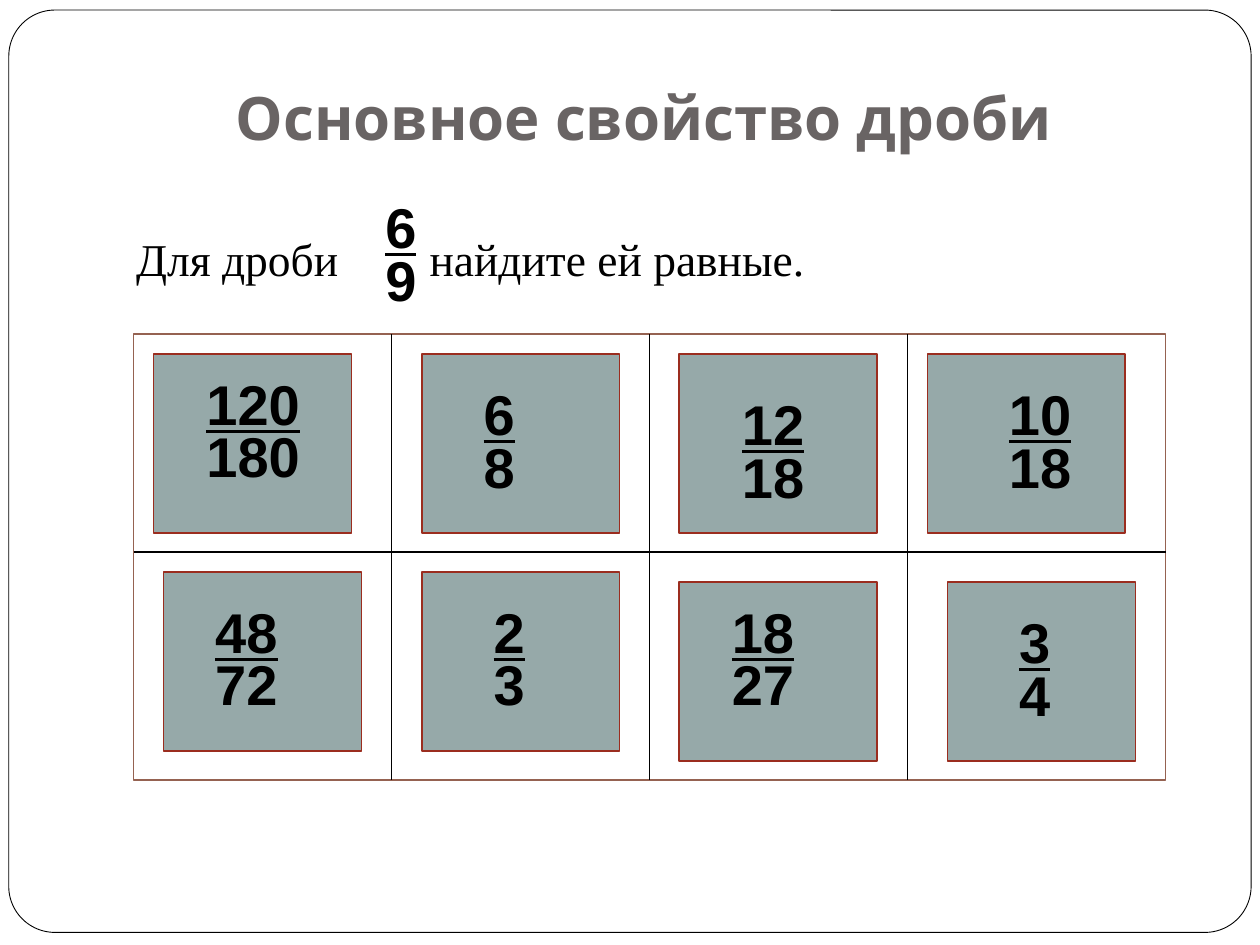
from dataclasses import dataclass

from lxml import etree
from pptx import Presentation
from pptx.dml.color import RGBColor
from pptx.enum.shapes import MSO_CONNECTOR, MSO_SHAPE
from pptx.enum.text import MSO_ANCHOR, MSO_AUTO_SIZE, PP_ALIGN
from pptx.oxml.ns import qn
from pptx.util import Inches, Pt

STRAIGHT = MSO_CONNECTOR.STRAIGHT
RECTANGLE = MSO_SHAPE.RECTANGLE
ROUNDED = MSO_SHAPE.ROUNDED_RECTANGLE
BOTTOM = MSO_ANCHOR.BOTTOM
TOP = MSO_ANCHOR.TOP
NO_FIT = MSO_AUTO_SIZE.NONE
LEFT = PP_ALIGN.LEFT


@dataclass(frozen=True)
class Theme:
    white: str = "FFFFFF"
    black: str = "000000"
    title: str = "696464"
    card: str = "96A9A9"
    card_line: str = "9B2D1F"
    grid_line: str = "956251"
    title_font: str = "Karla"
    body_font: str = "Times New Roman"
    digit_font: str = "Arial"
    title_size: float = 34.2
    body_size: float = 26
    digit_size: float = 32


@dataclass(frozen=True)
class Fraction:
    top_number: str
    bottom_number: str
    left: float
    top: float
    width: float = 0.63


@dataclass(frozen=True)
class Card:
    left: float
    top: float
    fraction: Fraction
    width: float = 1.57


THEME = Theme()
CARD_HEIGHT = 1.42
DIGIT_HEIGHT = 0.63
DIGIT_STEP = 0.42
GRID_LEFT, GRID_TOP, GRID_WIDTH, GRID_HEIGHT = 1.06, 2.65, 8.19, 3.54
GRID_COLUMNS = 4
ROW_LINE = 4.38
FRACTION_GAP = 45.5

CARDS = (
    Card(5.39, 2.81, Fraction("12", "18", 5.79, 3.04, 0.94)),
    Card(3.35, 2.81, Fraction("6", "8", 3.74, 2.96)),
    Card(7.36, 2.81, Fraction("10", "18", 7.91, 2.96, 1.1)),
    Card(1.22, 2.81, Fraction("120", "180", 1.54, 2.88, 1.02)),
    Card(5.39, 4.62, Fraction("18", "27", 5.71, 4.69, 0.95)),
    Card(3.35, 4.54, Fraction("2", "3", 3.82, 4.69)),
    Card(1.3, 4.54, Fraction("48", "72", 1.61, 4.69, 1.02)),
    Card(7.52, 4.62, Fraction("3", "4", 7.99, 4.77, 0.71), 1.49),
)


def place(shape, left: float, top: float, width: float, height: float) -> None:
    shape.left, shape.top = Inches(left), Inches(top)
    shape.width, shape.height = Inches(width), Inches(height)


def write_text(box, text: str, *, font: str, size: float, color: str,
               bold: bool = False, underline: bool = False,
               before: float = 0, spacing: float = 0, anchor=TOP):
    frame = box.text_frame
    frame.word_wrap = True
    frame.auto_size = NO_FIT
    frame.vertical_anchor = anchor
    para = frame.paragraphs[0]
    para.alignment = LEFT
    para.space_before = Pt(before)
    span = para.add_run()
    span.text = text
    span.font.name = font
    span.font.size = Pt(size)
    span.font.bold = bold
    span.font.underline = underline
    span.font.color.rgb = RGBColor.from_string(color)
    if spacing:
        span._r.get_or_add_rPr().set("spc", str(round(spacing * 100)))
    return para


def add_box(shapes, kind, left: float, top: float, width: float, height: float,
            fill: str, line: str, line_width: float):
    box = shapes.add_shape(kind, Inches(left), Inches(top), Inches(width), Inches(height))
    box.shadow.inherit = False
    box.fill.solid()
    box.fill.fore_color.rgb = RGBColor.from_string(fill)
    box.line.color.rgb = RGBColor.from_string(line)
    box.line.width = Pt(line_width)
    return box


def add_line(shapes, x1: float, y1: float, x2: float, y2: float):
    line = shapes.add_connector(STRAIGHT, Inches(x1), Inches(y1), Inches(x2), Inches(y2))
    line.line.color.rgb = RGBColor.from_string(THEME.black)
    line.line.width = Pt(0.75)
    etree.SubElement(line.element.spPr, qn("a:effectLst"))
    return line


def add_fraction(shapes, fraction: Fraction) -> None:
    for row, number in enumerate((fraction.top_number, fraction.bottom_number)):
        box = shapes.add_textbox(
            Inches(fraction.left), Inches(fraction.top + row * DIGIT_STEP),
            Inches(fraction.width), Inches(DIGIT_HEIGHT))
        write_text(box, number, font=THEME.digit_font, size=THEME.digit_size,
                   color=THEME.black, bold=True, underline=row == 0, before=4.4)


def add_card(page, card: Card) -> None:
    group = page.shapes.add_group_shape()
    add_box(group.shapes, RECTANGLE, card.left, card.top, card.width, CARD_HEIGHT,
            THEME.card, THEME.card_line, 0.75)
    add_fraction(group.shapes, card.fraction)


def add_grid(page) -> None:
    grid = add_box(page.shapes, RECTANGLE, GRID_LEFT, GRID_TOP, GRID_WIDTH, GRID_HEIGHT,
                   THEME.white, THEME.grid_line, 1)
    add_line(page.shapes, GRID_LEFT, ROW_LINE, GRID_LEFT + GRID_WIDTH, ROW_LINE)
    for column in range(1, GRID_COLUMNS):
        x = GRID_LEFT + column * GRID_WIDTH / GRID_COLUMNS
        line = add_line(page.shapes, x, GRID_TOP, x, GRID_TOP + GRID_HEIGHT)
        if column * 2 == GRID_COLUMNS:
            line.begin_connect(grid, 0)
            line.end_connect(grid, 2)


def add_task(body) -> None:
    place(body, 0.98, 1.78, 8.5, 4.95)
    for text, spacing in (("Для дроби", 0), (" ", FRACTION_GAP), ("найдите ей равные.", 0)):
        para = write_text(body, text, font=THEME.body_font, size=THEME.body_size,
                          color=THEME.black, before=5.8, spacing=spacing)
    properties = para._p.get_or_add_pPr()
    properties.set("marL", str(Inches(0.3)))
    properties.set("indent", str(Inches(-0.3)))
    etree.SubElement(properties, qn("a:buNone"))


def main() -> None:
    deck = Presentation()
    deck.slide_width, deck.slide_height = Inches(10), Inches(7.5)
    page = deck.slides.add_slide(deck.slide_layouts[1])
    title, body = page.placeholders

    border = add_box(page.shapes, ROUNDED, 0.07, 0.08, 9.86, 7.32,
                     THEME.white, THEME.black, 0.5)
    border.adjustments[0] = 0.05
    title.element.addprevious(border.element)

    place(title, 1.77, 0.68, 6.99, 0.63)
    write_text(title, "Основное свойство дроби", font=THEME.title_font,
               size=THEME.title_size, color=THEME.title, bold=True, anchor=BOTTOM)
    title.text_frame.margin_bottom = Inches(0.1)

    add_task(body)
    given = page.shapes.add_group_shape()
    add_fraction(given.shapes, Fraction("6", "9", 2.96, 1.48))
    add_grid(page)
    for card in CARDS:
        add_card(page, card)
    deck.save("out.pptx")


if __name__ == "__main__":
    main()
